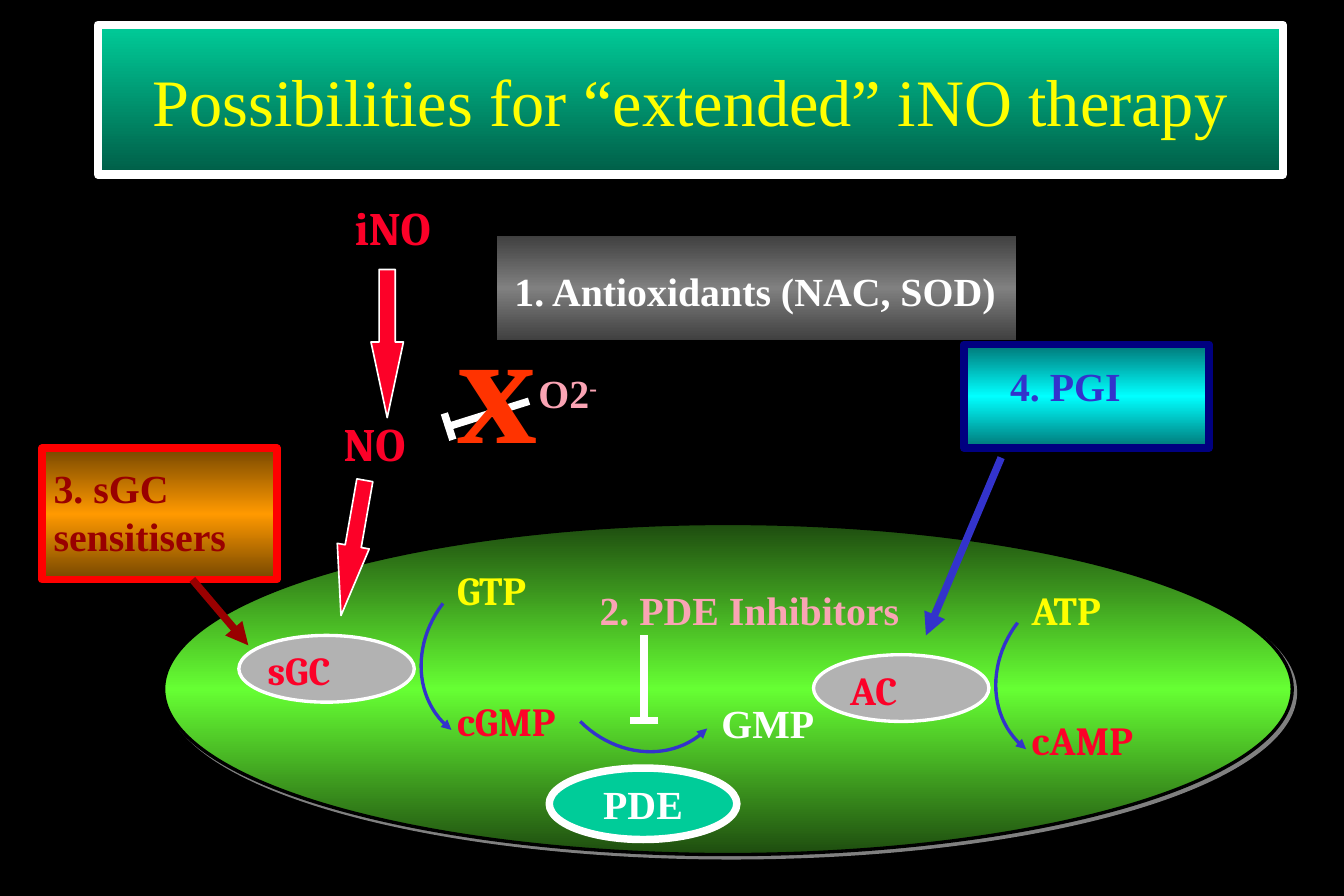
from copy import deepcopy

from pptx import Presentation
from pptx.dml.color import RGBColor
from pptx.enum.shapes import MSO_CONNECTOR, MSO_SHAPE
from pptx.enum.text import MSO_ANCHOR, MSO_AUTO_SIZE, PP_ALIGN
from pptx.oxml import parse_xml
from pptx.oxml.ns import nsdecls, qn
from pptx.util import Cm, Pt

RECT, OVAL, DOWN = MSO_SHAPE.RECTANGLE, MSO_SHAPE.OVAL, MSO_SHAPE.DOWN_ARROW
STRAIGHT = MSO_CONNECTOR.STRAIGHT
LEFT, CENTER = PP_ALIGN.LEFT, PP_ALIGN.CENTER
TOP, MIDDLE = MSO_ANCHOR.TOP, MSO_ANCHOR.MIDDLE
GROW, FIXED = MSO_AUTO_SIZE.SHAPE_TO_FIT_TEXT, MSO_AUTO_SIZE.NONE

BLACK = RGBColor(0x00, 0x00, 0x00)
WHITE = RGBColor(0xFF, 0xFF, 0xFF)
YELLOW = RGBColor(0xFF, 0xFF, 0x00)
CRIMSON = RGBColor(0xFC, 0x01, 0x28)
RED = RGBColor(0xFF, 0x00, 0x00)
MAROON = RGBColor(0x99, 0x00, 0x00)
SCARLET = RGBColor(0xFF, 0x33, 0x00)
PINK = RGBColor(0xFA, 0xA4, 0xB4)
BLUE = RGBColor(0x33, 0x33, 0xCC)
NAVY = RGBColor(0x00, 0x00, 0x80)
SILVER = RGBColor(0xB2, 0xB2, 0xB2)
GRAY = RGBColor(0x80, 0x80, 0x80)
COAL = RGBColor(0x3B, 0x3B, 0x3B)
ORANGE = RGBColor(0xFF, 0x99, 0x00)
BROWN = RGBColor(0x76, 0x47, 0x00)
LIME = RGBColor(0x66, 0xFF, 0x33)
MOSS = RGBColor(0x1E, 0x4C, 0x0F)
CYAN = RGBColor(0x00, 0xFF, 0xFF)
TEAL = RGBColor(0x00, 0x76, 0x76)
JADE = RGBColor(0x00, 0xCC, 0x99)
PINE = RGBColor(0x00, 0x5E, 0x47)

TIMES, CAMBRIA = "Times New Roman", "Cambria"


def write(shape, text, size=24, font=TIMES, color=WHITE, bold=True,
          align=LEFT, anchor=TOP, fit=FIXED, sup=""):
    frame = shape.text_frame
    frame.word_wrap = False
    frame.auto_size = fit
    frame.vertical_anchor = anchor
    frame.text = text
    if sup:
        run = frame.paragraphs[-1].add_run()
        run.text = sup
        run._r.get_or_add_rPr().set("baseline", "30000")
    for para in frame.paragraphs:
        para.alignment = align
        for run in para.runs:
            run.font.name = font
            run.font.size = Pt(size)
            run.font.bold = bold
            run.font.color.rgb = color


def label(slide, text, x, y, w, h=1.27, **style):
    box = slide.shapes.add_textbox(Cm(x), Cm(y), Cm(w), Cm(h))
    write(box, text, fit=GROW, **style)


def shade(shape, colors):
    """Fill from top to bottom with evenly spaced colours."""
    fill = shape.fill
    fill.gradient()
    fill.gradient_angle = 270
    stops = shape._element.spPr.find(".//" + qn("a:gsLst"))
    while len(stops) < len(colors):
        stops.append(deepcopy(stops[0]))
    for i, (stop, color) in enumerate(zip(fill.gradient_stops, colors)):
        stop.position = i / (len(colors) - 1)
        stop.color.rgb = color


def block(slide, kind, x, y, w, h, fills, edge, width):
    shape = slide.shapes.add_shape(kind, Cm(x), Cm(y), Cm(w), Cm(h))
    shape.shadow.inherit = False
    if len(fills) > 1:
        shade(shape, fills)
    else:
        shape.fill.solid()
        shape.fill.fore_color.rgb = fills[0]
    shape.line.color.rgb = edge
    shape.line.width = Pt(width)
    return shape


def glow(shape):
    """Cast a half-transparent white shadow to the lower right."""
    effects = shape._element.spPr.find(qn("a:effectLst"))
    effects.append(parse_xml(
        f'<a:outerShdw {nsdecls("a")} dist="35560" dir="2700000" algn="ctr" '
        'rotWithShape="0"><a:srgbClr val="FFFFFF"><a:alpha val="50000"/>'
        '</a:srgbClr></a:outerShdw>'))


def tip(shape, end):
    line = shape.line._get_or_add_ln()
    line.append(parse_xml(f'<a:{end} {nsdecls("a")} type="triangle"/>'))


def stroke(slide, x1, y1, x2, y2, color=WHITE, arrow=False):
    line = slide.shapes.add_connector(STRAIGHT, Cm(x1), Cm(y1), Cm(x2), Cm(y2))
    line.line.color.rgb = color
    line.line.width = Pt(4.5)
    line._element.spPr.append(parse_xml(f'<a:effectLst {nsdecls("a")}/>'))
    if arrow:
        tip(line, "tailEnd")


def curve(slide, points, steps=24):
    """Draw a cubic curve with an arrowhead at its first point."""
    spots = []
    for i in range(steps + 1):
        t = i / steps
        parts = ((1 - t) ** 3, 3 * t * (1 - t) ** 2, 3 * t * t * (1 - t), t ** 3)
        spots.append(tuple(
            Cm(sum(k * p[axis] for k, p in zip(parts, points)))
            for axis in (0, 1)))
    maker = slide.shapes.build_freeform(*spots[0])
    maker.add_line_segments(spots[1:], close=False)
    arc = maker.convert_to_shape()
    arc.shadow.inherit = False
    arc.fill.background()
    arc.line.color.rgb = BLUE
    arc.line.width = Pt(2)
    tip(arc, "headEnd")


def drop(slide, x, y, h, head, turn=0):
    arrow = block(slide, DOWN, x, y, 0.69, h, [CRIMSON], WHITE, 1)
    arrow.adjustments[0] = 0.5
    arrow.adjustments[1] = head
    arrow.rotation = turn


def cycle(slide, x, y, enzyme, inset, width, source, product):
    """Enzyme with the curved step from its source to its product."""
    block(slide, OVAL, x, y, 3.73, 1.42, [SILVER], WHITE, 2)
    label(slide, enzyme, x + inset, y + 0.1, width, font=CAMBRIA, color=CRIMSON)
    shape = ((4.52, 2.01), (3.73, 1.4), (3.66, 0.21), (4.34, -0.68))
    curve(slide, [(x + dx, y + dy) for dx, dy in shape])
    label(slide, source, x + 4.39, y - 1.6, 2.26, font=CAMBRIA, color=YELLOW)
    label(slide, product, x + 4.39, y + 1.17, 2.92, font=CAMBRIA, color=CRIMSON)


def main():
    deck = Presentation()
    deck.slide_width, deck.slide_height = Cm(28.58), Cm(19.05)
    slide = deck.slides.add_slide(deck.slide_layouts[6])
    slide.background.fill.solid()
    slide.background.fill.fore_color.rgb = BLACK

    # Panels, title and cell
    block(slide, RECT, 10.49, 4.93, 11.2, 2.39, [COAL, GRAY, COAL], BLACK, 4.5)
    block(slide, RECT, 0.89, 9.53, 5, 2.79, [BROWN, ORANGE, BROWN], RED, 4.5)
    title = block(slide, RECT, 2.08, 0.53, 25.2, 3.18, [JADE, PINE], WHITE, 5)
    write(title, "Possibilities for “extended” iNO therapy", size=40,
          color=YELLOW, bold=False, align=CENTER, anchor=MIDDLE)
    cell = block(slide, OVAL, 3.48, 11.13, 24, 7.04, [MOSS, LIME, MOSS], BLACK, 2)
    glow(cell)

    # Inhaled NO entering the cell
    cycle(slide, 5.08, 13.51, "sGC", 0.36, 2.21, "GTP", "cGMP")
    label(slide, "NO", 7.06, 8.69, 2.16, 1.42, size=28, font=CAMBRIA, color=CRIMSON)
    drop(slide, 7.89, 5.73, 3.15, 2.33)
    drop(slide, 7.16, 10.19, 2.92, 2.17, turn=10)
    label(slide, "iNO", 7.29, 4.11, 2.49, 1.42, size=28, font=CAMBRIA, color=CRIMSON)

    # 1: antioxidants stop superoxide
    label(slide, "O2", 11.2, 7.72, 1.78, color=PINK, sup="-")
    stroke(slide, 11.25, 8.53, 9.53, 9.07)
    stroke(slide, 9.63, 9.35, 9.45, 8.79)
    label(slide, "1. Antioxidants (NAC, SOD)", 10.69, 5.54, 10.8)
    label(slide, "x", 9.47, 5.92, 2.21, 4.32, size=96, color=SCARLET)

    # 2: PDE inhibitors
    curve(slide, [(15.04, 15.49), (14.33, 16.21), (13.13, 16.13), (12.34, 15.34)])
    label(slide, "GMP", 15.09, 14.73, 2.49)
    label(slide, "2. PDE Inhibitors", 12.5, 12.32, 6.88, color=PINK)
    stroke(slide, 13.69, 13.51, 13.69, 15.32)
    stroke(slide, 14, 15.32, 13.39, 15.32)

    # 3: sGC sensitisers
    stroke(slide, 4.09, 12.32, 5.28, 13.72, color=MAROON, arrow=True)
    label(slide, "3. sGC\nsensitisers", 0.89, 9.73, 4.19, 2.29, color=MAROON)

    # 4: PGI
    block(slide, RECT, 20.5, 7.32, 5.21, 2.21, [TEAL, CYAN, TEAL], NAVY, 4.5)
    cycle(slide, 17.3, 13.92, "AC", 0.53, 1.78, "ATP", "cAMP")
    stroke(slide, 21.29, 9.73, 19.69, 13.51, color=BLUE, arrow=True)
    label(slide, "4. PGI", 21.23, 7.57, 2.87, color=BLUE)

    # PDE enzyme
    pde = block(slide, OVAL, 11.68, 16.33, 3.99, 1.52, [JADE], WHITE, 4.5)
    write(pde, "PDE", align=CENTER, anchor=MIDDLE)

    deck.save("out.pptx")


if __name__ == "__main__":
    main()
